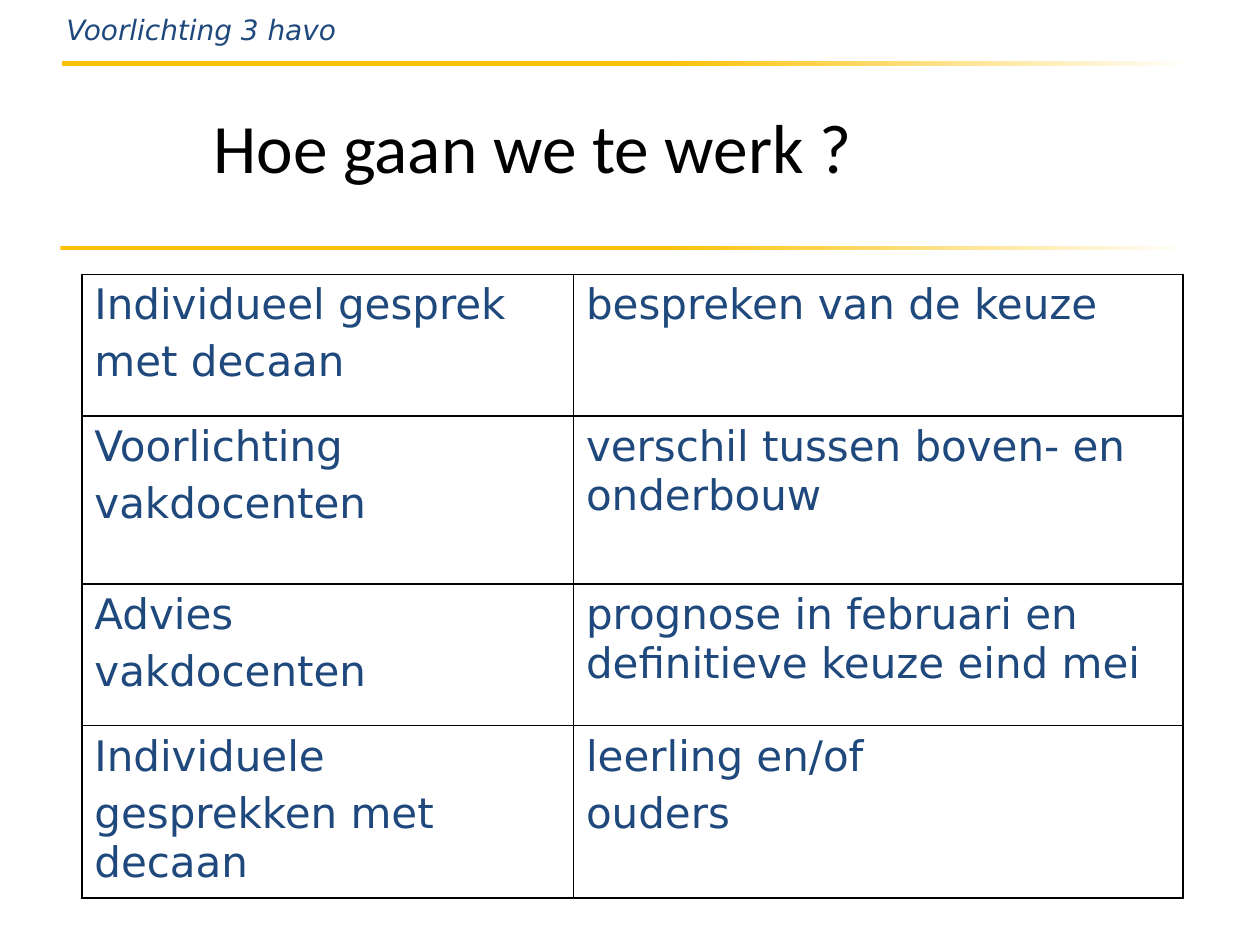
"""Build the slide 'Hoe gaan we te werk ?' with its header, rules and table."""
from lxml.etree import SubElement
from pptx import Presentation
from pptx.dml.color import RGBColor
from pptx.enum.shapes import MSO_SHAPE
from pptx.enum.text import MSO_ANCHOR, PP_ALIGN
from pptx.oxml.ns import qn
from pptx.util import Cm, Pt

NAVY = RGBColor(0x1F, 0x49, 0x7D)
GOLD = RGBColor(0xFF, 0xC0, 0x00)
WHITE = RGBColor(0xFF, 0xFF, 0xFF)
BLACK = RGBColor(0x00, 0x00, 0x00)

HEADER = "Voorlichting 3 havo"
TITLE = "Hoe gaan we te werk ?"
RULES = [(1.25, 1.24), (1.22, 4.95)]
COL_WIDTHS = [9.91, 12.29]
ROW_HEIGHTS = [2.86, 3.38, 2.86, 3.38]
STEPS = [
    (["Individueel gesprek", "met decaan"], ["bespreken van de keuze"]),
    (["Voorlichting", "vakdocenten"], ["verschil tussen boven- en onderbouw"]),
    (["Advies", "vakdocenten"],
     ["prognose in februari en definitieve keuze eind mei"]),
    (["Individuele", "gesprekken met decaan"], ["leerling en/of", "ouders"]),
]


def add_run(p, text, size, color, font="DejaVu Sans", italic=False):
    r = p.add_run()
    r.text = text
    r.font.name = font
    r.font.size = Pt(size)
    r.font.italic = italic
    r.font.color.rgb = color


def add_box(s, left, top, width, height):
    tf = s.shapes.add_textbox(Cm(left), Cm(top), Cm(width), Cm(height)).text_frame
    tf.word_wrap = True
    return tf


def add_rule(s, left, top):
    sp = s.shapes.add_shape(MSO_SHAPE.RECTANGLE, Cm(left), Cm(top), Cm(22.86), Cm(0.09))
    sp.shadow.inherit = False
    sp.line.fill.background()
    sp.fill.gradient()
    sp.fill.gradient_angle = 0
    for stop, position, color in zip(sp.fill.gradient_stops, (0.52, 1), (GOLD, WHITE)):
        stop.position = position
        stop.color.rgb = color


def add_borders(cell):
    tcPr = cell._tc.get_or_add_tcPr()
    for side in ("a:lnL", "a:lnR", "a:lnT", "a:lnB"):
        ln = SubElement(tcPr, qn(side), w=str(Pt(1)))
        fill = SubElement(ln, qn("a:solidFill"))
        SubElement(fill, qn("a:srgbClr"), val=str(BLACK))


def fill_cell(cell, lines):
    add_borders(cell)
    cell.fill.background()
    tf = cell.text_frame
    for i, line in enumerate(lines):
        p = tf.add_paragraph() if i else tf.paragraphs[0]
        if i:
            p.space_before = Pt(4.8)
        add_run(p, line, 24, NAVY)


def add_steps(s):
    table = s.shapes.add_table(
        len(STEPS), len(COL_WIDTHS), Cm(1.65), Cm(5.53),
        Cm(sum(COL_WIDTHS)), Cm(sum(ROW_HEIGHTS))).table
    table.first_row = False
    table.horz_banding = False
    for col, width in zip(table.columns, COL_WIDTHS):
        col.width = Cm(width)
    for row, height, step in zip(table.rows, ROW_HEIGHTS, STEPS):
        row.height = Cm(height)
        for cell, lines in zip(row.cells, step):
            fill_cell(cell, lines)


def main():
    prs = Presentation()
    prs.slide_width, prs.slide_height = Cm(25.4), Cm(19.05)
    s = prs.slides.add_slide(prs.slide_layouts[6])
    for left, top in RULES:
        add_rule(s, left, top)
    tf = add_box(s, 1.09, 0.13, 10.8, 0.94)
    add_run(tf.paragraphs[0], HEADER, 16, NAVY, italic=True)
    tf = add_box(s, 1.7, 1.93, 18.08, 2.01)
    tf.vertical_anchor = MSO_ANCHOR.MIDDLE
    p = tf.paragraphs[0]
    p.alignment = PP_ALIGN.CENTER
    add_run(p, TITLE, 39.6, BLACK, font="Calibri")
    add_steps(s)
    prs.save("out.pptx")


if __name__ == "__main__":
    main()
